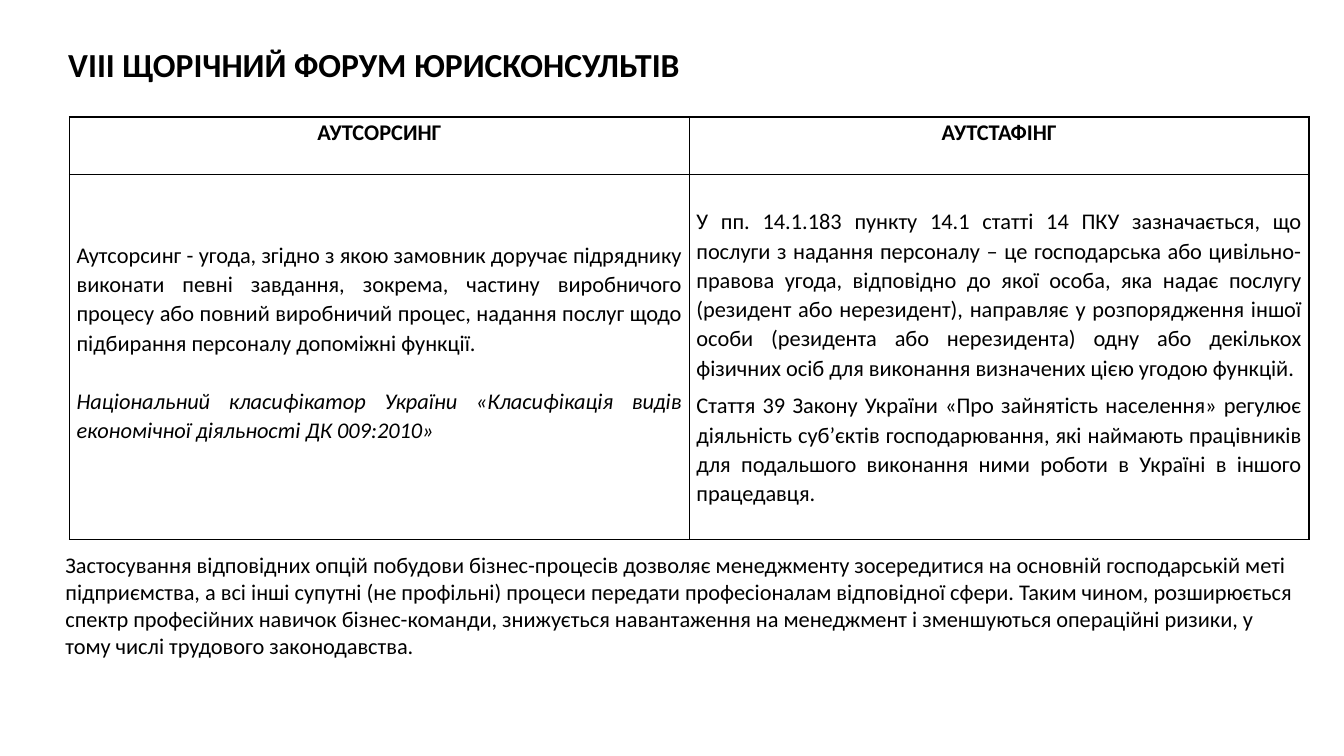
from dataclasses import dataclass

from lxml.etree import SubElement
from pptx import Presentation
from pptx.dml.color import RGBColor
from pptx.enum.text import MSO_ANCHOR as Anchor, PP_ALIGN as Align
from pptx.oxml.ns import qn
from pptx.util import Cm, Pt

COLORS = {"text": "000000", "border": "000000", "cell": "FFFFFF"}
FONT = "Calibri"
LINE_GAP = 21  # one empty line of table text, in points


@dataclass
class Para:
    text: str
    size: int = 16
    bold: bool = False
    italic: bool = False
    align: Align = Align.LEFT
    line_spacing: float = 1.0
    before: int = 0


@dataclass
class CellText:
    paras: list[Para]
    anchor: Anchor = Anchor.MIDDLE
    bottom: float = 0


@dataclass
class TextBox:
    left: float
    top: float
    width: float
    height: float
    para: Para


def header(text: str) -> CellText:
    return CellText([Para(text, bold=True, align=Align.CENTER, line_spacing=1.07)], Anchor.TOP)


def body(text: str, italic: bool = False, before: int = 0) -> Para:
    return Para(text, italic=italic, align=Align.JUSTIFY, line_spacing=1.07, before=before)


BOXES = [
    TextBox(1.47, 0.99, 17.02, 1.27, Para("VIII ЩОРІЧНИЙ ФОРУМ ЮРИСКОНСУЛЬТІВ", size=24, bold=True)),
    TextBox(1.4, 13.77, 31.57, 3, Para(
        "Застосування відповідних опцій побудови бізнес-процесів дозволяє менеджменту "
        "зосередитися на основній господарській меті підприємства, а всі інші супутні "
        "(не профільні) процеси передати професіоналам відповідної сфери. Таким чином, "
        "розширюється спектр професійних навичок бізнес-команди, знижується навантаження "
        "на менеджмент і зменшуються операційні ризики, у тому числі трудового законодавства.")),
]

ROW_HEIGHTS = [1.45, 9.2]
COLUMN_WIDTH = 15.62
ROWS = [
    [header("АУТСОРСИНГ"), header("АУТСТАФІНГ")],
    [
        CellText([
            body("Аутсорсинг - угода, згідно з якою замовник доручає підряднику виконати певні "
                 "завдання, зокрема, частину виробничого процесу або повний виробничий процес, "
                 "надання послуг щодо підбирання персоналу допоміжні функції."),
            body("Національний класифікатор України «Класифікація видів економічної діяльності "
                 "ДК 009:2010»", italic=True, before=LINE_GAP),
        ], bottom=0.74),
        CellText([
            body("У пп. 14.1.183 пункту 14.1 статті 14 ПКУ зазначається, що послуги з надання "
                 "персоналу – це господарська або цивільно-правова угода, відповідно до якої "
                 "особа, яка надає послугу (резидент або нерезидент), направляє у розпорядження "
                 "іншої особи (резидента або нерезидента) одну або декількох фізичних осіб для "
                 "виконання визначених цією угодою функцій."),
            body("Стаття 39 Закону України «Про зайнятість населення» регулює діяльність "
                 "суб’єктів господарювання, які наймають працівників для подальшого виконання "
                 "ними роботи в Україні в іншого працедавця.", before=6),
        ]),
    ],
]


def write(tf, paras: list[Para]) -> None:
    for i, para in enumerate(paras):
        p = tf.add_paragraph() if i else tf.paragraphs[0]
        p.text = para.text
        p.alignment = para.align
        p.line_spacing = para.line_spacing
        if para.before:
            p.space_before = Pt(para.before)
        font = p.font
        font.name, font.size = FONT, Pt(para.size)
        font.bold, font.italic = para.bold, para.italic
        font.color.rgb = RGBColor.from_string(COLORS["text"])


def add_borders(cell) -> None:
    tc_pr = cell._tc.get_or_add_tcPr()
    for i, side in enumerate(("lnL", "lnR", "lnT", "lnB")):
        ln = SubElement(tc_pr, qn(f"a:{side}"), w=str(Pt(1)))
        fill = SubElement(ln, qn("a:solidFill"))
        SubElement(fill, qn("a:srgbClr"), val=COLORS["border"])
        tc_pr.insert(i, ln)


def fill_cell(cell, content: CellText) -> None:
    cell.margin_left = cell.margin_right = Cm(0.18)
    cell.margin_top, cell.margin_bottom = Cm(0), Cm(content.bottom)
    cell.vertical_anchor = content.anchor
    cell.fill.solid()
    cell.fill.fore_color.rgb = RGBColor.from_string(COLORS["cell"])
    add_borders(cell)
    write(cell.text_frame, content.paras)


def add_comparison(s) -> None:
    columns = len(ROWS[0])
    table = s.shapes.add_table(len(ROWS), columns, Cm(1.75), Cm(2.95),
                               Cm(columns * COLUMN_WIDTH), Cm(sum(ROW_HEIGHTS))).table
    table.horz_banding = False
    for column in table.columns:
        column.width = Cm(COLUMN_WIDTH)
    for row, height, contents in zip(table.rows, ROW_HEIGHTS, ROWS):
        row.height = Cm(height)
        for cell, content in zip(row.cells, contents):
            fill_cell(cell, content)


def add_text(s, box: TextBox) -> None:
    sp = s.shapes.add_textbox(Cm(box.left), Cm(box.top), Cm(box.width), Cm(box.height))
    sp.text_frame.word_wrap = True
    write(sp.text_frame, [box.para])


def main() -> None:
    prs = Presentation()
    prs.slide_width, prs.slide_height = Cm(33.87), Cm(19.05)
    s = prs.slides.add_slide(prs.slide_layouts[6])
    add_comparison(s)
    for box in BOXES:
        add_text(s, box)
    prs.save("out.pptx")


if __name__ == "__main__":
    main()
